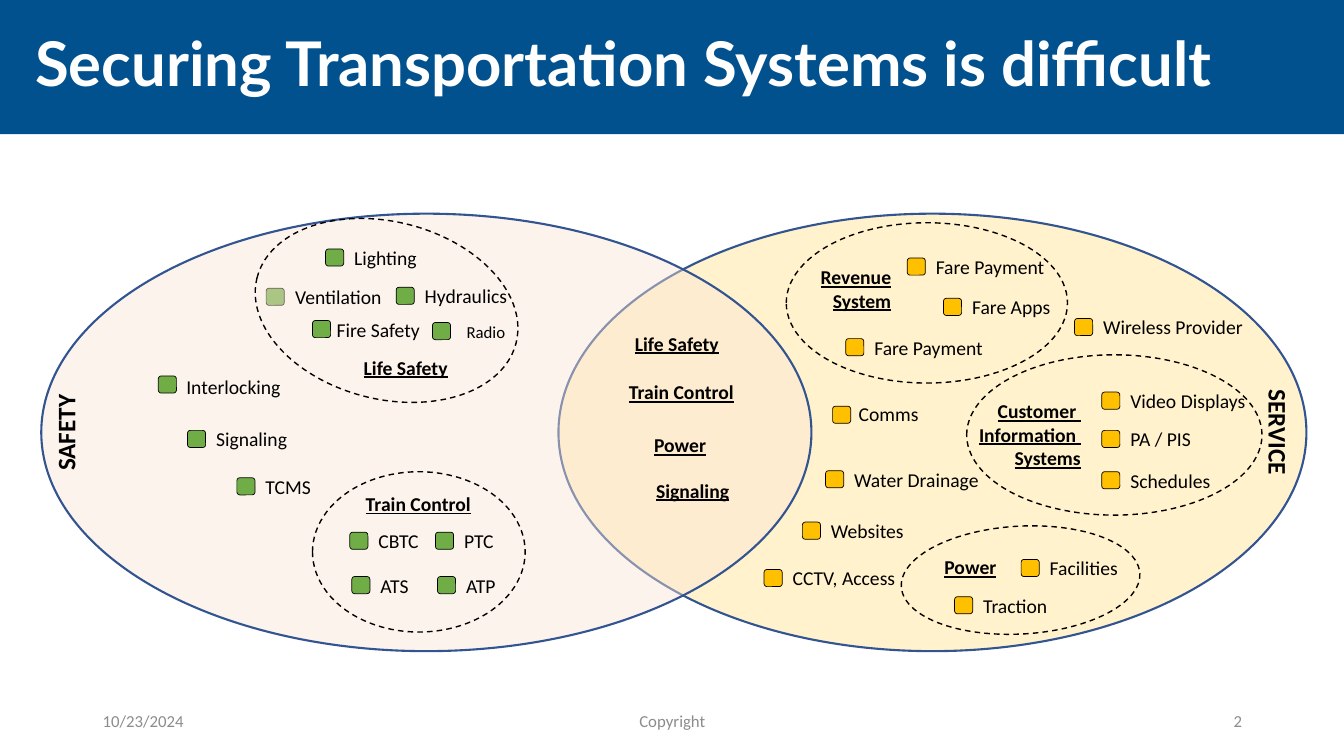
from pptx import Presentation
from pptx.dml.color import RGBColor
from pptx.enum.dml import MSO_LINE
from pptx.enum.shapes import MSO_SHAPE as SHAPE
from pptx.enum.text import MSO_ANCHOR as ANCHOR, MSO_AUTO_SIZE as FIT, PP_ALIGN as ALIGN
from pptx.oxml.ns import qn
from pptx.util import Inches, Pt
from lxml.etree import SubElement

COLORS = {
    "banner": "00518E", "white": "FFFFFF", "black": "000000", "outline": "325491",
    "safety": "FBE5D6", "service": "FFF2CC", "green": "70AD47", "amber": "FFC000",
    "footer": "8C8C8C",
}
COLS, ROWS = 133.33, 75
UNIT = Inches(0.1)

GROUPS = [
    (25.1, 22, 26.5, 17.6, 14.1),
    (31, 46.8, 21.1, 15.9, 0),
    (89.4, 52.2, 23.7, 10.7, -3.2),
    (95.9, 35.2, 29.3, 15.9, 0),
    (78, 22.1, 27.9, 15.9, 0),
]
HEADINGS = [
    (35.1, 34.8, 10.4, "Life Safety"),
    (35.3, 48.3, 12.5, "Train Control"),
    (92.7, 54.6, 7.2, "Power"),
    (62, 32.4, 10.4, "Life Safety"),
    (61.4, 37.2, 12.5, "Train Control"),
    (63.9, 42.5, 7.2, "Power"),
    (64.1, 47, 9.3, "Signaling"),
]
SAFETY_ITEMS = [
    (39.3, 28.5, 10.3, "Hydraulics"),
    (32.3, 24.7, 8.3, "Lighting"),
    (34.7, 52.8, 6.1, "CBTC"),
    (43.2, 52.8, 5, "PTC"),
    (34.9, 57.2, 4.9, "ATS"),
    (43.4, 57.2, 5, "ATP"),
    (23.5, 47.4, 6.6, "TCMS"),
    (18.6, 42.7, 9.2, "Signaling"),
    (15.7, 37.3, 11.5, "Interlocking", 1.8, -0.6),
    (31, 31.8, 10.5, "Fire Safety", 1.4, -0.8),
]
SERVICE_ITEMS = [
    (94.7, 59.2, 8.5, "Traction"),
    (101.3, 55.5, 8.9, "Facilities"),
    (109.3, 38.9, 13.6, "Video Displays"),
    (109.3, 42.7, 8.1, "PA / PIS"),
    (109.3, 46.8, 10, "Schedules"),
    (90, 25.6, 13.3, "Fare Payment"),
    (93.6, 29.6, 9.9, "Fare Apps"),
    (83.9, 33.6, 13.3, "Fare Payment"),
    (106.6, 31.6, 16, "Wireless Provider"),
    (75.8, 56.5, 12.7, "CCTV, Access"),
    (79.6, 51.8, 9.3, "Websites"),
    (81.9, 46.7, 14.5, "Water Drainage"),
    (82.6, 40.3, 8, "Comms", 1.6, -0.9),
]


class Deck:
    font = "Calibri"

    def __init__(self):
        self.prs = Presentation()
        self.prs.slide_width, self.prs.slide_height = self.grid(COLS, ROWS)
        self.s = self.prs.slides.add_slide(self.prs.slide_layouts[5])

    def grid(self, *cells):
        return [round(c * UNIT) for c in cells]

    def color(self, name):
        return RGBColor.from_string(COLORS[name])

    def add_text(self, p, text, size, color="black", font=None, bold=False, underline=False):
        for i, line in enumerate(text.split("\n")):
            if i:
                p.add_line_break()
            r = p.add_run()
            r.text = line
            r.font.name, r.font.size = font or self.font, Pt(size)
            r.font.bold, r.font.underline = bold, underline
            r.font.color.rgb = self.color(color)

    def title(self, text, height):
        sp = self.s.shapes.title
        sp.left, sp.top, sp.width, sp.height = self.grid(0, 0, COLS, height)
        sp.fill.solid()
        sp.fill.fore_color.rgb = self.color("banner")
        tf = sp.text_frame
        tf.auto_size, tf.vertical_anchor = FIT.NONE, ANCHOR.MIDDLE
        tf.margin_left = round(3.5 * UNIT)
        p = tf.paragraphs[0]
        p.alignment, p.line_spacing = ALIGN.LEFT, 0.9
        self.add_text(p, text, 44, "white", "Lato", bold=True)

    def shape(self, kind, col, row, w, h, line, weight, fill=None, alpha=None, turn=0):
        sp = self.s.shapes.add_shape(kind, *self.grid(col, row, w, h))
        sp.shadow.inherit = False
        sp.rotation = turn
        sp.line.color.rgb, sp.line.width = self.color(line), Pt(weight)
        if fill:
            sp.fill.solid()
            sp.fill.fore_color.rgb = self.color(fill)
        else:
            sp.fill.background()
        if alpha:
            rgb = sp.element.spPr.find(qn("a:solidFill"))[0]
            SubElement(rgb, qn("a:alpha"), val=str(alpha * 1000))
        return sp

    def domain(self, col, w, fill, alpha=None):
        self.shape(SHAPE.OVAL, col, 21.2, w, 43.4, "outline", 1.5, fill, alpha)

    def group(self, col, row, w, h, turn):
        sp = self.shape(SHAPE.OVAL, col, row, w, h, "black", 1, turn=turn)
        sp.line.dash_style = MSO_LINE.DASH

    def marker(self, col, row, fill):
        self.shape(SHAPE.ROUNDED_RECTANGLE, col, row, 1.8, 1.7, "black", 0.5, fill)

    def label(self, col, row, w, text, h=3.4, size=14, align=ALIGN.LEFT, turn=0,
              wrap=False, anchor=ANCHOR.TOP, **style):
        sp = self.s.shapes.add_textbox(*self.grid(col, row, w, h))
        sp.rotation = turn
        tf = sp.text_frame
        tf.word_wrap, tf.vertical_anchor = wrap, anchor
        p = tf.paragraphs[0]
        p.alignment = align
        self.add_text(p, text, size, **style)

    def heading(self, col, row, w, text, **layout):
        self.label(col, row, w, text, bold=True, underline=True, **layout)

    def item(self, fill, col, row, w, text, dx=1.85, dy=-0.8):
        self.marker(col, row, fill)
        self.label(col + dx, row + dy, w, text)

    def footer(self, col, w, text, align):
        self.label(col, 69.5, w, text, h=4, size=12, align=align, wrap=True,
                   anchor=ANCHOR.MIDDLE, color="footer")


def main():
    d = Deck()
    d.title("Securing Transportation Systems is difficult", 13.3)
    d.marker(26.4, 28.6, "green")
    d.domain(55.4, 74.2, "service")
    d.domain(4.1, 76.4, "safety", 43)
    d.label(121.6, 40.9, 10.5, "SERVICE", h=4, size=18, turn=90, bold=True)
    d.label(1.7, 40.9, 9.6, "SAFETY", h=4, size=18, turn=270, bold=True)
    d.label(28.3, 27.8, 10.7, "Ventilation")
    for group in GROUPS:
        d.group(*group)
    for heading in HEADINGS:
        d.heading(*heading)
    d.heading(96, 39.1, 12.2, "Customer \nInformation \nSystems", h=8.1, align=ALIGN.RIGHT)
    d.heading(80.4, 25.8, 9, "Revenue\nSystem", h=5.7, align=ALIGN.RIGHT)
    for fill, items in (("green", SAFETY_ITEMS), ("amber", SERVICE_ITEMS)):
        for item in items:
            d.item(fill, *item)
    d.marker(42.9, 32, "green")
    d.label(45.3, 31.4, 6.4, "Radio", h=3, size=12, wrap=True)
    d.footer(9.2, 30, "10/23/2024", ALIGN.LEFT)
    d.footer(44.2, 45, "Copyright", ALIGN.CENTER)
    d.footer(94.2, 30, "2", ALIGN.RIGHT)
    d.prs.save("out.pptx")


if __name__ == "__main__":
    main()
